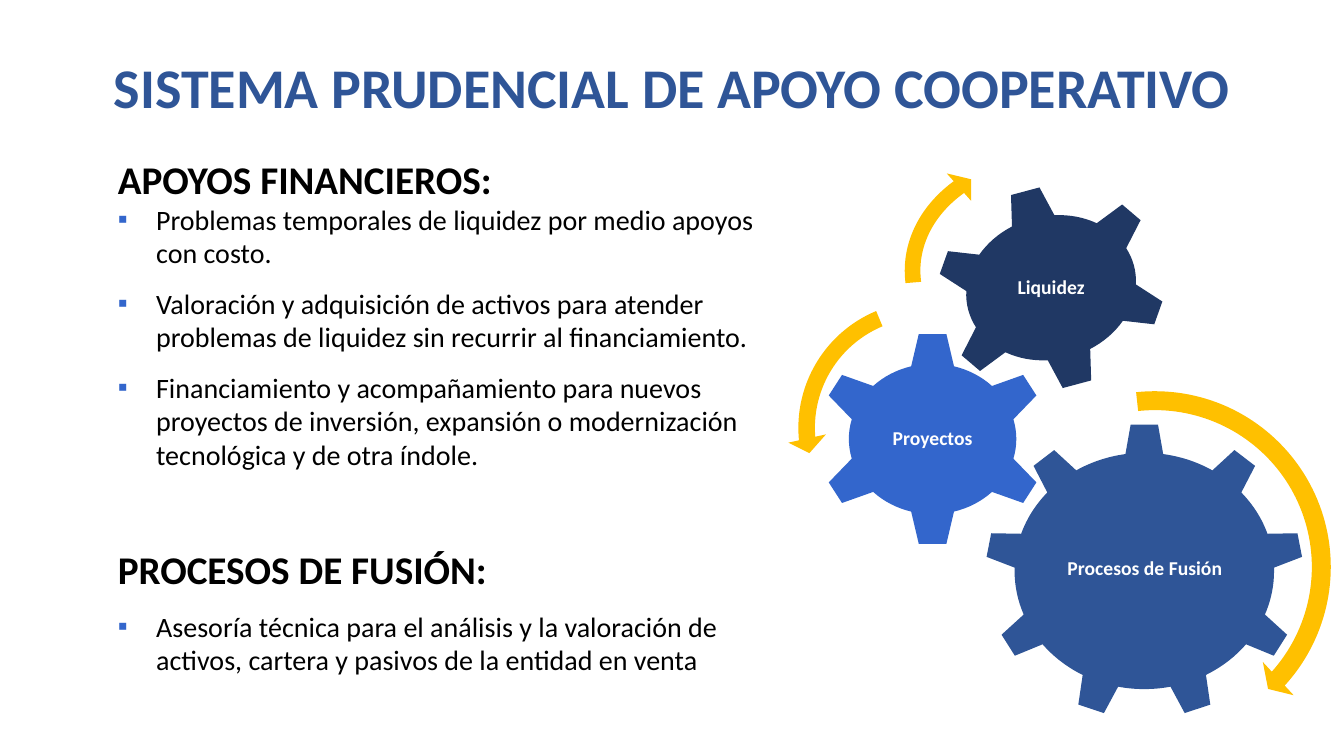
from lxml.etree import SubElement
from pptx import Presentation
from pptx.dml.color import RGBColor
from pptx.enum.shapes import MSO_SHAPE as SHAPE
from pptx.enum.text import MSO_ANCHOR as ANCHOR, PP_ALIGN as ALIGN
from pptx.oxml.ns import qn
from pptx.util import Inches, Pt

FONT = "Calibri"
BLUE, NAVY, BRIGHT, GOLD = "2F5597", "203864", "3366CC", "FFC000"

SUPPORT = [
    "Problemas temporales de liquidez por medio apoyos con costo.",
    "Valoración y adquisición de activos para atender problemas de liquidez "
    "sin recurrir al financiamiento.",
    "Financiamiento y acompañamiento para nuevos proyectos de inversión, "
    "expansión o modernización tecnológica y de otra índole.",
]
MERGER = [
    "Asesoría técnica para el análisis y la valoración de activos, cartera "
    "y pasivos de la entidad en venta",
]

GEARS = [
    (SHAPE.GEAR_9, (1.96, 2.81, 3.16, 2.93), 0, BLUE,
     "Procesos de Fusión", (2.58, 3.5, 1.93, 1.51)),
    (SHAPE.GEAR_6, (0.29, 1.9, 2.3, 2.13), 0, BRIGHT,
     "Proyectos", (0.85, 2.44, 1.18, 1.05)),
    (SHAPE.GEAR_6, (1.46, 0.45, 2.31, 2.03), 345, NAVY,
     "Liquidez", (1.98, 0.88, 1.27, 1.17)),
]
ARROWS = [
    (SHAPE.CIRCULAR_ARROW, (1.77, 2.36, 3.75, 3.75),
     (0.05, 2.99, 25.3, 158.31, 0.06)),
    (SHAPE.LEFT_CIRCULAR_ARROW, (0, 1.49, 2.73, 2.73),
     (0.06, 4.3, 104.89, 148.38, 0.07)),
    (SHAPE.CIRCULAR_ARROW, (1.06, 0, 3.13, 2.59),
     (0.06, 3.94, 133.14, 105.08, 0.07)),
]


def color(hex_code):
    return RGBColor.from_string(hex_code)


def inches(box):
    return [Inches(v) for v in box]


def shifted(box, left, top):
    return (left + box[0], top + box[1], box[2], box[3])


def add_textbox(slide, box, anchor=ANCHOR.TOP, margin=None):
    tf = slide.shapes.add_textbox(*inches(box)).text_frame
    tf.word_wrap = True
    tf.vertical_anchor = anchor
    if margin is not None:
        tf.margin_left = tf.margin_right = Inches(margin)
        tf.margin_top = tf.margin_bottom = Inches(margin)
    return tf


def write(p, text, size, hex_code, bold=False):
    p.text = text
    font = p.runs[0].font
    font.name, font.size, font.bold = FONT, Pt(size), bold
    font.color.rgb = color(hex_code)


def write_centered(tf, text, size, hex_code):
    p = tf.paragraphs[0]
    p.alignment = ALIGN.CENTER
    p.line_spacing = 0.9
    write(p, text, size, hex_code, bold=True)


def add_bullet(p):
    pPr = p._p.get_or_add_pPr()
    pPr.set("marL", str(Inches(0.38)))
    pPr.set("indent", str(-Inches(0.38)))
    clr = SubElement(pPr, qn("a:buClr"))
    SubElement(clr, qn("a:srgbClr"), val=BRIGHT)
    SubElement(pPr, qn("a:buFont"), typeface="Arial")
    SubElement(pPr, qn("a:buChar"), char="▪")


def add_title(slide, box):
    tf = add_textbox(slide, box, ANCHOR.MIDDLE)
    write_centered(tf, "SISTEMA PRUDENCIAL DE APOYO COOPERATIVO", 40, BLUE)


def add_bullets(tf, items):
    for item in items:
        p = tf.add_paragraph()
        write(p, item, 20, "000000")
        p.space_after = Pt(12)
        add_bullet(p)


def add_body(slide, box):
    tf = add_textbox(slide, box)
    write(tf.paragraphs[0], "APOYOS FINANCIEROS:", 28, "000000", bold=True)
    add_bullets(tf, SUPPORT)
    p = tf.add_paragraph()
    write(p, "PROCESOS DE FUSIÓN:", 28, "000000", bold=True)
    p.space_before, p.space_after = Pt(41), Pt(12)
    add_bullets(tf, MERGER)


def add_filled(slide, kind, box, hex_code):
    sp = slide.shapes.add_shape(kind, *inches(box))
    sp.shadow.inherit = False
    sp.fill.solid()
    sp.fill.fore_color.rgb = color(hex_code)
    sp.line.fill.background()
    return sp


def add_gears(slide, left, top):
    for kind, box, rotation, hex_code, label, label_box in GEARS:
        sp = add_filled(slide, kind, shifted(box, left, top), hex_code)
        sp.rotation = rotation
        tf = add_textbox(slide, shifted(label_box, left, top),
                         ANCHOR.MIDDLE, 0.02)
        write_centered(tf, label, 14, "FFFFFF")
    for kind, box, adjustments in ARROWS:
        sp = add_filled(slide, kind, shifted(box, left, top), GOLD)
        for i, value in enumerate(adjustments):
            sp.adjustments[i] = value


def main():
    prs = Presentation()
    prs.slide_width, prs.slide_height = Inches(13.33), Inches(7.5)
    slide = prs.slides.add_slide(prs.slide_layouts[6])
    add_title(slide, (0.45, 0.17, 12.43, 1.45))
    add_gears(slide, 7.81, 1.39)
    add_body(slide, (1.07, 1.49, 6.88, 5.32))
    prs.save("out.pptx")


if __name__ == "__main__":
    main()
